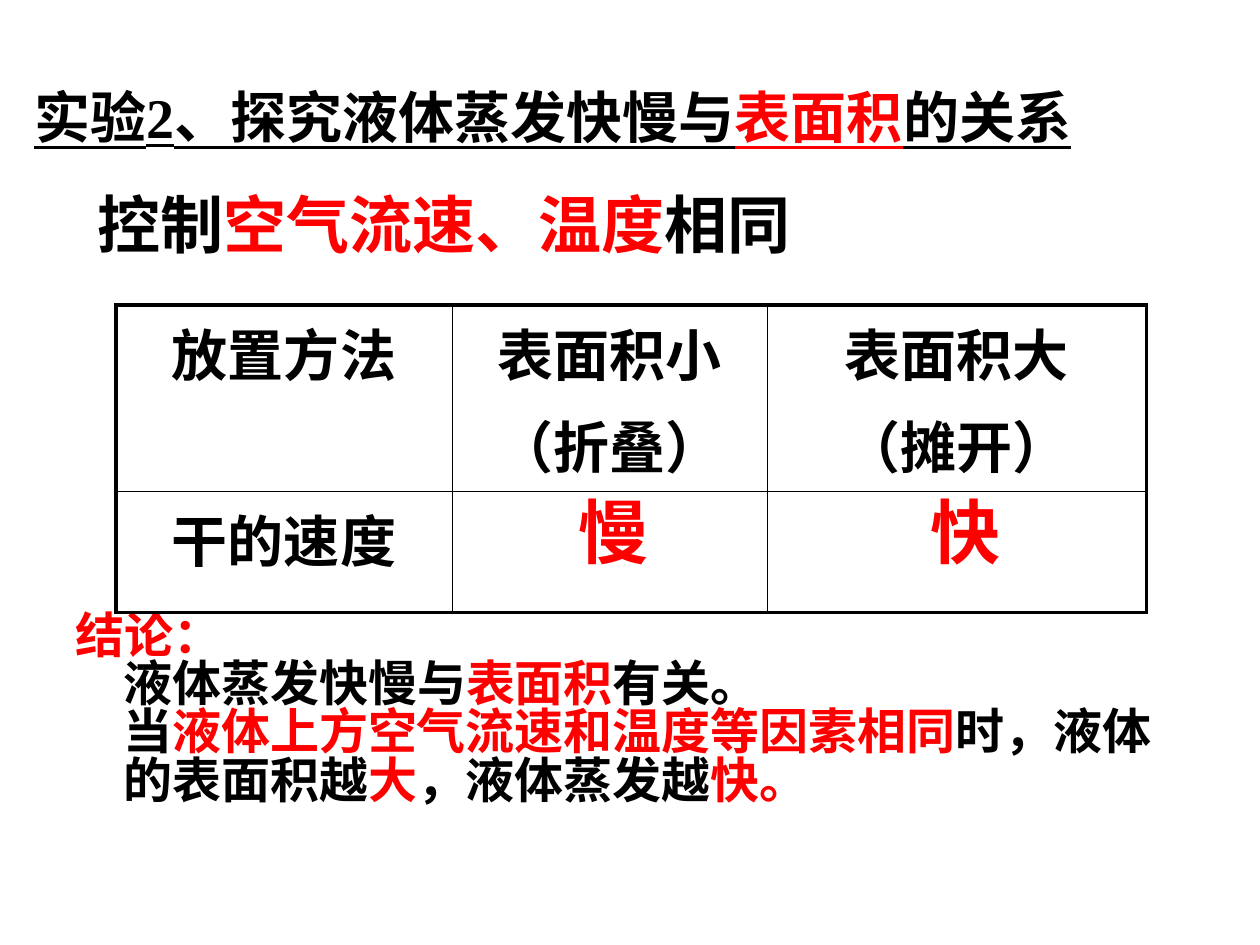
from pptx import Presentation
from pptx.dml.color import RGBColor
from pptx.enum.text import MSO_ANCHOR, MSO_AUTO_SIZE, PP_ALIGN
from pptx.oxml.ns import qn
from pptx.util import Inches, Pt
from lxml import etree

LEFT, CENTER = PP_ALIGN.LEFT, PP_ALIGN.CENTER
MIDDLE, TOP = MSO_ANCHOR.MIDDLE, MSO_ANCHOR.TOP
NO_AUTOFIT = MSO_AUTO_SIZE.NONE
BLACK = RGBColor(0, 0, 0)
RED = RGBColor(255, 0, 0)
FONT = "Times New Roman"
OUTER_LINE, INNER_LINE = 2.25, 1

# Content: each paragraph is a list of (text, colour) runs
TITLE = [("实验2、探究液体蒸发快慢与", BLACK), ("表面积", RED), ("的关系", BLACK)]
CONTROL = [("控制", BLACK), ("空气流速、温度", RED), ("相同", BLACK)]
CONCLUSION = [
    [("结论：", RED)],
    [("液体蒸发快慢与", BLACK), ("表面积", RED), ("有关。", BLACK)],
    [("当", BLACK), ("液体上方空气流速和温度等因素相同", RED),
     ("时，液体的表面积越", BLACK), ("大", RED),
     ("，液体蒸发越", BLACK), ("快。", RED)],
]
TABLE_ROWS = [
    ["放置方法", "表面积小\n（折叠）", "表面积大\n（摊开）"],
    ["干的速度", "", ""],
]
COLUMN_WIDTHS = [2.67, 2.5, 3.01]
ROW_HEIGHTS = [1.38, 0.96]
ANSWERS = [("慢", 4.17, 1.39), ("快", 7, 1.33)]  # text, left, width


def format_paragraph(paragraph, size, alignment=LEFT, before=0):
    paragraph.alignment = alignment
    paragraph.space_before = Pt(before)
    font = paragraph.font
    font.name, font.size, font.bold = FONT, Pt(size), True


def add_runs(paragraph, runs, underline=None):
    for text, color in runs:
        run = paragraph.add_run()
        run.text = text
        run.font.color.rgb = color
        run.font.underline = underline


def remove_bullet(paragraph, margin=0):
    properties = paragraph._p.get_or_add_pPr()
    properties.set("marL", str(Inches(margin)))
    properties.set("indent", "0")
    etree.SubElement(properties, qn("a:buNone"))


def place(shape, left, top, width, height, anchor=TOP):
    shape.left, shape.top = Inches(left), Inches(top)
    shape.width, shape.height = Inches(width), Inches(height)
    frame = shape.text_frame
    frame.word_wrap = True
    frame.auto_size = NO_AUTOFIT
    frame.vertical_anchor = anchor
    return frame


def set_borders(cell, widths):
    properties = cell._tc.get_or_add_tcPr()
    for index, (side, width) in enumerate(widths.items()):
        line = etree.Element(qn(f"a:{side}"), w=str(Pt(width)))
        fill = etree.SubElement(line, qn("a:solidFill"))
        etree.SubElement(fill, qn("a:srgbClr"), val=str(BLACK))
        properties.insert(index, line)


presentation = Presentation()
presentation.slide_width, presentation.slide_height = Inches(10), Inches(7.5)
slide = presentation.slides.add_slide(presentation.slide_layouts[3])
title, control, conclusion = slide.placeholders

# Title and controlled conditions
paragraph = place(title, 0.17, 0.3, 9.58, 1.25, MIDDLE).paragraphs[0]
add_runs(paragraph, TITLE, underline=True)
format_paragraph(paragraph, 32)

paragraph = place(control, 0.67, 1.42, 8.08, 1).paragraphs[0]
add_runs(paragraph, CONTROL)
format_paragraph(paragraph, 36, before=7.2)
remove_bullet(paragraph)

# Conclusion
frame = place(conclusion, 0.5, 4.83, 9.08, 2.33)
for index, runs in enumerate(CONCLUSION):
    paragraph = frame.add_paragraph() if index else frame.paragraphs[0]
    add_runs(paragraph, runs)
    format_paragraph(paragraph, 28)
    paragraph.line_spacing = 0.82
    remove_bullet(paragraph, 0.38 if index else 0)

# Table with a heavier outer frame
table = slide.shapes.add_table(
    len(ROW_HEIGHTS), len(COLUMN_WIDTHS), Inches(0.92), Inches(2.42),
    Inches(sum(COLUMN_WIDTHS)), Inches(sum(ROW_HEIGHTS))).table
table.first_row = table.horz_banding = False
for column, width in zip(table.columns, COLUMN_WIDTHS):
    column.width = Inches(width)
last_row, last_column = len(ROW_HEIGHTS) - 1, len(COLUMN_WIDTHS) - 1
for r, texts in enumerate(TABLE_ROWS):
    table.rows[r].height = Inches(ROW_HEIGHTS[r])
    for c, text in enumerate(texts):
        cell = table.cell(r, c)
        cell.text = text
        cell.fill.background()
        for paragraph in cell.text_frame.paragraphs:
            format_paragraph(paragraph, 32, CENTER, before=6.4)
            paragraph.font.color.rgb = BLACK
        on_edge = {"lnL": c == 0, "lnR": c == last_column,
                   "lnT": r == 0, "lnB": r == last_row}
        set_borders(cell, {side: OUTER_LINE if edge else INNER_LINE
                           for side, edge in on_edge.items()})

# Answers laid over the empty cells
for text, left, width in ANSWERS:
    box = slide.shapes.add_textbox(0, 0, 0, 0)
    paragraph = place(box, left, 3.83, width, 0.77).paragraphs[0]
    add_runs(paragraph, [(text, RED)])
    format_paragraph(paragraph, 40, CENTER, before=20)

presentation.save("out.pptx")
